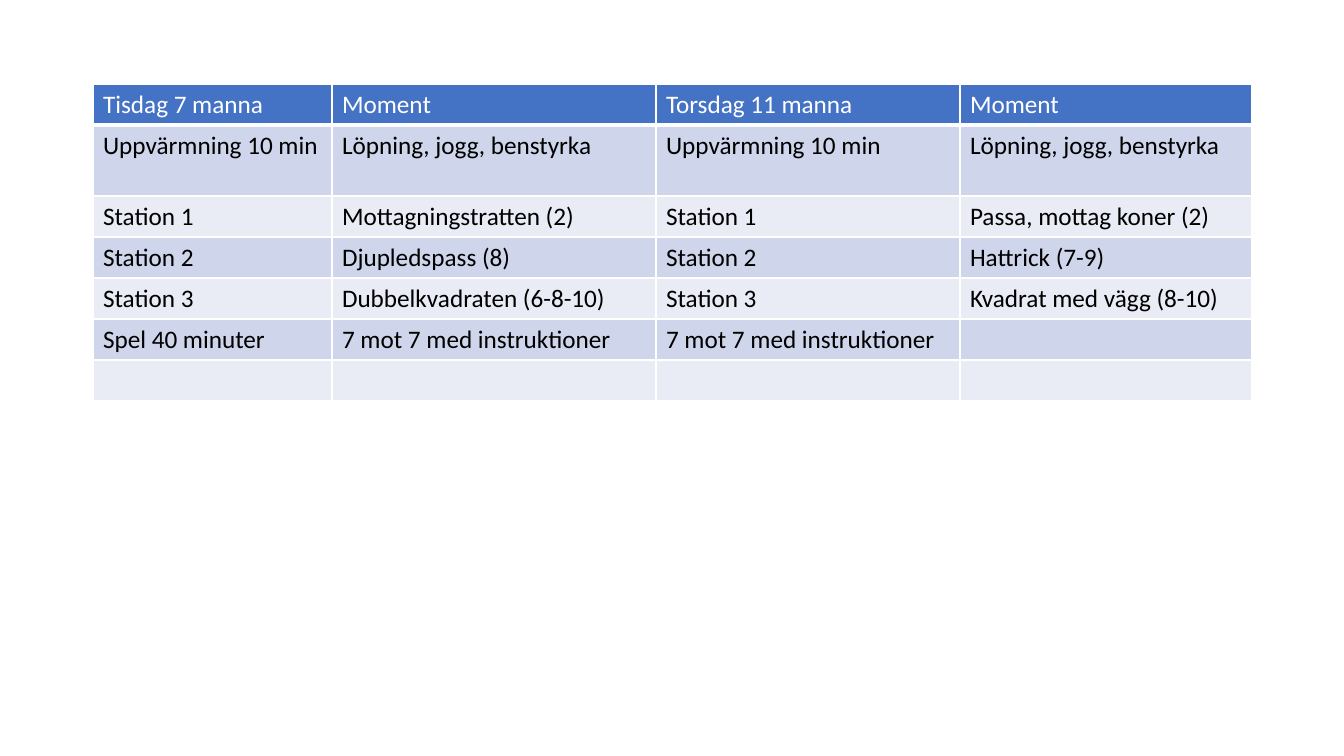
from dataclasses import dataclass

from lxml.etree import SubElement
from pptx import Presentation
from pptx.dml.color import RGBColor
from pptx.oxml.ns import qn
from pptx.util import Emu, Pt


@dataclass(frozen=True)
class Theme:
    font: str = "Calibri"
    body_size: int = 18
    header_fill: str = "4472C4"
    header_text: str = "FFFFFF"
    bands: tuple = ("CFD5EA", "E9EBF5")
    body_text: str = "000000"
    border: str = "FFFFFF"
    thin: int = 1
    thick: int = 3


class SlideBuilder:
    EMU_PER_PX = 914400 / 100.8

    def __init__(self, theme, width, height):
        self.theme = theme
        self.presentation = Presentation()
        self.presentation.slide_width = self.px(width)
        self.presentation.slide_height = self.px(height)
        blank_layout = self.presentation.slide_layouts[6]
        self.slide = self.presentation.slides.add_slide(blank_layout)

    def px(self, length):
        return Emu(round(length * self.EMU_PER_PX))

    def table(self, left, top, widths, heights, rows):
        schedule = self.slide.shapes.add_table(
            len(heights), len(widths), self.px(left), self.px(top),
            self.px(sum(widths)), self.px(sum(heights))).table
        for column, width in zip(schedule.columns, widths):
            column.width = self.px(width)
        for row_number, (row, height) in enumerate(zip(schedule.rows, heights)):
            row.height = self.px(height)
            for cell, wording in zip(row.cells, rows[row_number]):
                self.cell(cell, wording, row_number)

    def cell(self, cell, wording, row_number):
        theme = self.theme
        is_header = row_number == 0
        fill = theme.header_fill if is_header else theme.bands[(row_number - 1) % 2]
        cell.fill.solid()
        cell.fill.fore_color.rgb = RGBColor.from_string(fill)
        cell.text = wording
        font = cell.text_frame.paragraphs[0].font
        font.name = theme.font
        font.size = Pt(theme.body_size)
        font.bold = False
        font.color.rgb = RGBColor.from_string(
            theme.header_text if is_header else theme.body_text)
        self.borders(cell, theme.thick if is_header else theme.thin)

    def borders(self, cell, bottom_weight):
        properties = cell._tc.get_or_add_tcPr()
        thin = self.theme.thin
        weights = {"lnL": thin, "lnR": thin, "lnT": thin, "lnB": bottom_weight}
        for position, (side, weight) in enumerate(weights.items()):
            edge = SubElement(properties, qn(f"a:{side}"), w=str(Pt(weight)))
            paint = SubElement(edge, qn("a:solidFill"))
            SubElement(paint, qn("a:srgbClr"), val=self.theme.border)
            properties.insert(position, edge)


def main():
    training_plan = [
        ("Tisdag 7 manna", "Moment", "Torsdag 11 manna", "Moment"),
        ("Uppvärmning 10 min", "Löpning, jogg, benstyrka",
         "Uppvärmning 10 min", "Löpning, jogg, benstyrka"),
        ("Station 1", "Mottagningstratten (2)", "Station 1", "Passa, mottag koner (2)"),
        ("Station 2", "Djupledspass (8)", "Station 2", "Hattrick (7-9)"),
        ("Station 3", "Dubbelkvadraten (6-8-10)", "Station 3", "Kvadrat med vägg (8-10)"),
        ("Spel 40 minuter", "7 mot 7 med instruktioner", "7 mot 7 med instruktioner", ""),
        ("", "", "", ""),
    ]
    builder = SlideBuilder(Theme(), 1344, 756)
    builder.table(93, 84, (239, 324, 304, 292), (41, 71) + (41,) * 5, training_plan)
    builder.presentation.save("out.pptx")


if __name__ == "__main__":
    main()
